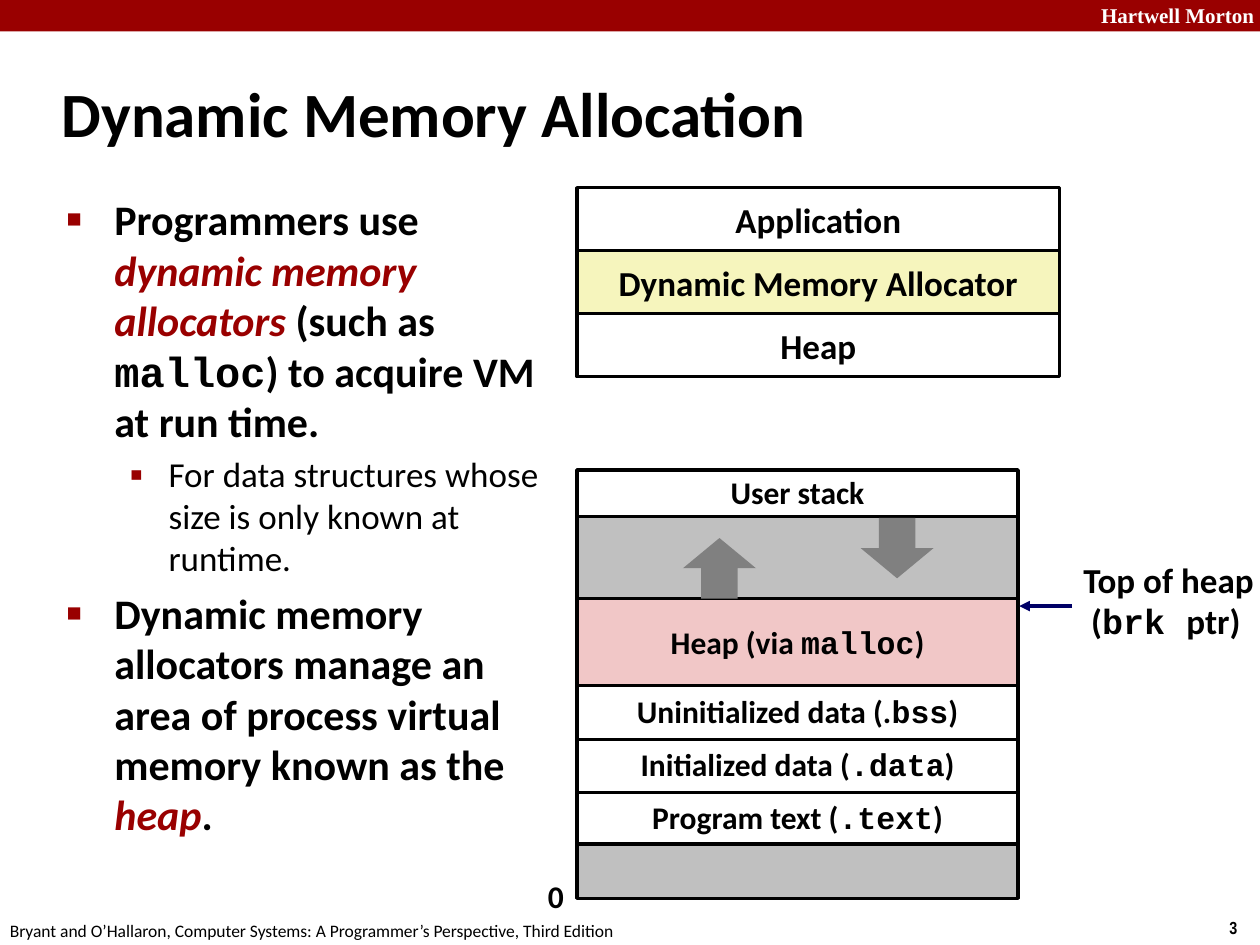
from lxml.etree import SubElement
from pptx import Presentation
from pptx.dml.color import RGBColor
from pptx.enum.shapes import MSO_CONNECTOR as Link, MSO_SHAPE as Form
from pptx.enum.text import MSO_ANCHOR as Anchor, PP_ALIGN as Align
from pptx.oxml.ns import qn
from pptx.util import Inches, Pt

RED, BLACK, WHITE, GRAY = "990000", "000000", "FFFFFF", "C0C0C0"


def color(code):
    """Turn a hex string into a colour."""
    return RGBColor.from_string(code)


def style(font, size, bold=True, name="Calibri", ink=BLACK):
    """Set the look of a font."""
    font.size, font.bold, font.name = Pt(size), bold, name
    font.color.rgb = color(ink)


def write(para, runs):
    """Fill a paragraph with (text, kind) runs, kind being plain, em or code."""
    for text, kind in runs:
        run = para.add_run()
        run.text = text
        if kind == "em":
            run.font.italic = True
            run.font.color.rgb = color(RED)
        elif kind == "code":
            run.font.name = "Courier New"


def plain(text):
    """Make a list with one plain run."""
    return [(text, "plain")]


def indent(para, left):
    """Hang the first line of a paragraph by the given width."""
    margin, hang = left
    props = para._p.get_or_add_pPr()
    props.set("marL", str(Inches(margin)))
    props.set("indent", str(-Inches(hang)))
    return props


def bullet(para, mark, scale):
    """Give a paragraph a red bullet."""
    props = para._p.get_or_add_pPr()
    tint = SubElement(props, qn("a:buClr"))
    SubElement(tint, qn("a:srgbClr"), val=RED)
    SubElement(props, qn("a:buSzPct"), val=str(scale * 1000))
    SubElement(props, qn("a:buFont"), typeface="Arial")
    SubElement(props, qn("a:buChar"), char=mark)


def label(slide, box, lines, size, wrap=False, space=None, **look):
    """Add a text box of one or more lines."""
    frame = slide.shapes.add_textbox(*map(Inches, box)).text_frame
    frame.word_wrap = wrap
    for i, runs in enumerate(lines):
        para = frame.add_paragraph() if i else frame.paragraphs[0]
        para.line_spacing = space
        style(para.font, size, **look)
        write(para, runs)
    return frame


def block(slide, form, box, fill, edge=None):
    """Add a filled shape with an optional 2 pt outline."""
    shape = slide.shapes.add_shape(form, *map(Inches, box))
    shape.shadow.inherit = False
    shape.fill.solid()
    shape.fill.fore_color.rgb = color(fill)
    if edge:
        shape.line.color.rgb = color(edge)
        shape.line.width = Pt(2)
    else:
        shape.line.fill.background()
    return shape


def cell(slide, box, fill, runs, size, space=None):
    """Add an outlined box with centred text."""
    frame = block(slide, Form.RECTANGLE, box, fill, BLACK).text_frame
    frame.word_wrap = False
    frame.vertical_anchor = Anchor.MIDDLE
    para = frame.paragraphs[0]
    para.alignment, para.line_spacing = Align.CENTER, space
    style(para.font, size)
    write(para, runs)


def arrow(slide, start, end, ink):
    """Add a straight line with an arrowhead at its end."""
    line = slide.shapes.add_connector(Link.STRAIGHT, *map(Inches, start + end))
    line.line.color.rgb = color(ink)
    line.line.width = Pt(2)
    SubElement(line.line._get_or_add_ln(), qn("a:tailEnd"), type="triangle")
    SubElement(line._element.spPr, qn("a:effectLst"))


def frame_page(slide):
    """Add the top band, footer and page number."""
    block(slide, Form.RECTANGLE, (0, 0, 10, 0.25), RED)
    label(slide, (8.64, -0.03, 1.43, 0.3), [plain("Hartwell Morton")], 12,
          wrap=True, name="Times New Roman", ink=WHITE)
    label(slide, (9.66, 7.23, 0.34, 0.27), [plain("3")], 10, name="Arial Narrow")
    source = "Bryant and O’Hallaron, Computer Systems: A Programmer’s Perspective, Third Edition"
    label(slide, (-0.02, 7.25, 5.08, 0.27), [plain(source)], 10, bold=False)


def head(slide):
    """Add the title."""
    frame = label(slide, (0.39, 0.48, 8.3, 0.83),
                  [plain("Dynamic Memory Allocation")], 36, wrap=True)
    frame.vertical_anchor = Anchor.MIDDLE
    indent(frame.paragraphs[0], (0.13, 0.13))


def body(slide):
    """Add the bulleted text on the left."""
    use = [("Programmers use ", "plain"), ("dynamic memory allocators ", "em"),
           ("(such as ", "plain"), ("malloc", "code"),
           (") to acquire VM at run time.", "plain")]
    size = plain("For data structures whose size is only known at runtime.")
    heap = [("Dynamic memory allocators manage an area of process virtual "
             "memory known as the ", "plain"), ("heap", "em"), (".", "plain")]
    frame = label(slide, (0.43, 1.49, 4.14, 5.44), [use, size, heap], 24, wrap=True)
    for level, para in zip((0, 1, 0), frame.paragraphs):
        points = (24, 20)[level]
        para.level = level
        para.space_before = Pt(points * 0.2)
        style(para.font, points, bold=level == 0)
        indent(para, ((0.38, 0.38), (0.81, 0.31))[level])
        bullet(para, *(("■", 60), ("▪", 110))[level])


def layers(slide):
    """Add the stack of software layers."""
    rows = [("Application", WHITE), ("Dynamic Memory Allocator", "F6F5BD"), ("Heap", WHITE)]
    for i, (text, fill) in enumerate(rows):
        cell(slide, (4.58, 1.49 + 0.5 * i, 3.83, 0.5), fill, plain(text), 20)


def memory(slide):
    """Add the map of process memory."""
    left, wide = 4.58, 3.5
    block(slide, Form.RECTANGLE, (left, 4.08, wide, 0.67), GRAY, BLACK)
    rows = [(4.75, 0.72, "F1C7C7", "Heap (via ", "malloc")]
    parts = [("Program text (", ".text"), ("Initialized data (", ".data"),
             ("Uninitialized data (.", "bss")]
    rows += [(6.28 - 0.42 * i, 0.43, WHITE, *part) for i, part in enumerate(parts)]
    for top, high, fill, text, code in rows:
        runs = [(text, "plain"), (code, "code"), (")", "plain")]
        cell(slide, (left, top, wide, high), fill, runs, 18, 0.98)
    cell(slide, (left, 3.73, wide, 0.37), WHITE, plain("User stack"), 18, 0.98)
    block(slide, Form.RECTANGLE, (left, 6.7, wide, 0.43), GRAY, BLACK)
    label(slide, (4.25, 6.93, 0.33, 0.4), [plain("0")], 18, space=0.98)
    brk = [(" (", "plain"), ("brk ", "code"), ("ptr)", "plain")]
    label(slide, (8.5, 4.4, 1.56, 0.76), [plain("Top of heap"), brk], 20, space=0.98)
    arrow(slide, (8.51, 4.81), (8.09, 4.81), "000066")
    block(slide, Form.DOWN_ARROW, (6.83, 4.11, 0.58, 0.48), "808080")
    block(slide, Form.UP_ARROW, (5.42, 4.27, 0.58, 0.48), "808080")


def main():
    """Build the slide and save it."""
    deck = Presentation()
    deck.slide_width, deck.slide_height = Inches(10), Inches(7.5)
    slide = deck.slides.add_slide(deck.slide_layouts[6])
    for part in (frame_page, head, body, memory, layers):
        part(slide)
    deck.save("out.pptx")


if __name__ == "__main__":
    main()
